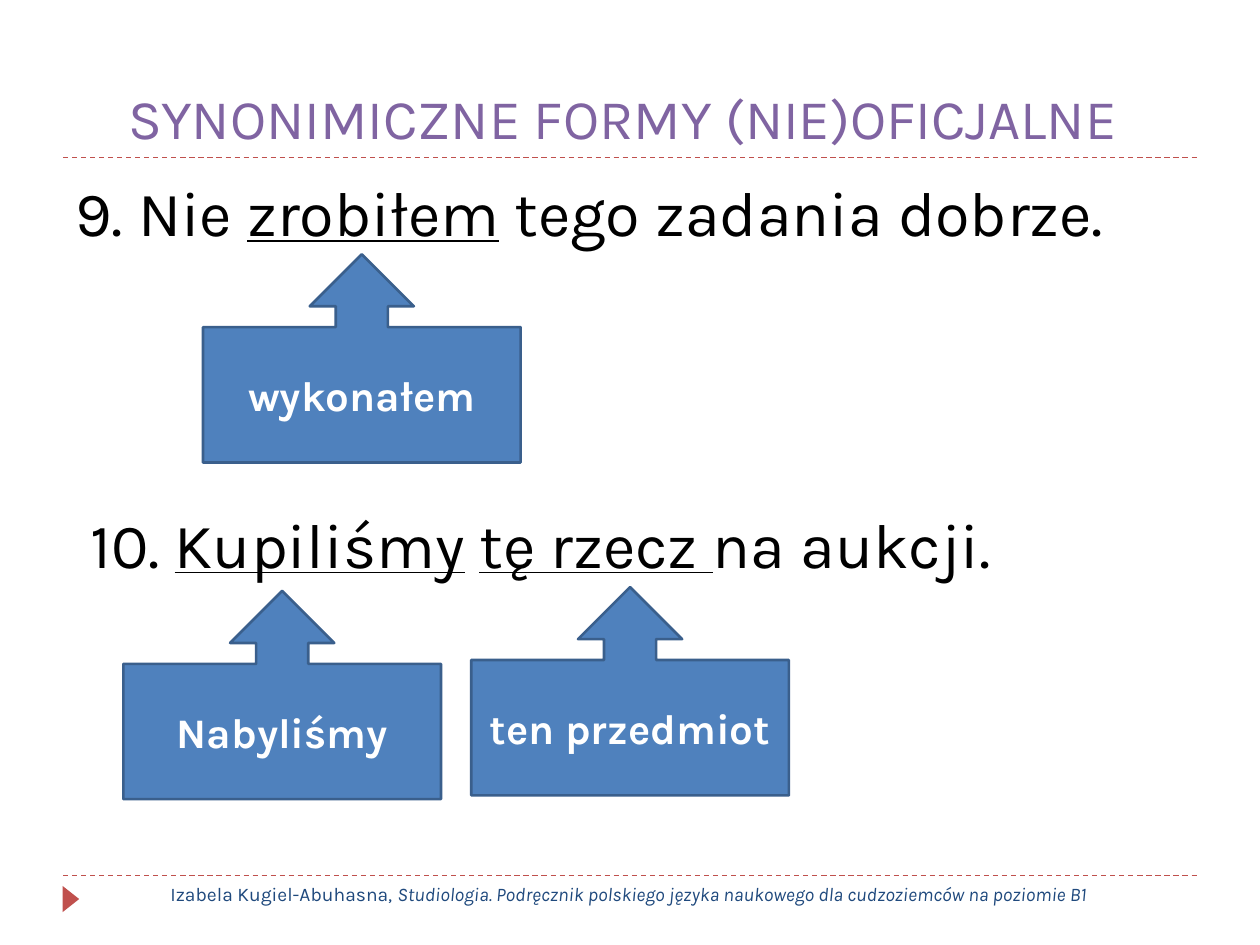
from lxml import etree
from pptx import Presentation
from pptx.dml.color import RGBColor
from pptx.enum.dml import MSO_LINE
from pptx.enum.shapes import MSO_CONNECTOR, MSO_SHAPE
from pptx.enum.text import MSO_ANCHOR, MSO_AUTO_SIZE, PP_ALIGN
from pptx.oxml.ns import qn
from pptx.util import Pt

DASH = MSO_LINE.DASH
STRAIGHT = MSO_CONNECTOR.STRAIGHT
TRIANGLE = MSO_SHAPE.ISOSCELES_TRIANGLE
CALLOUT = MSO_SHAPE.UP_ARROW_CALLOUT
TOP, MIDDLE, BOTTOM = MSO_ANCHOR.TOP, MSO_ANCHOR.MIDDLE, MSO_ANCHOR.BOTTOM
NO_AUTOFIT = MSO_AUTO_SIZE.NONE
LEFT, CENTER = PP_ALIGN.LEFT, PP_ALIGN.CENTER

FONT = "Karla"
COLORS = {
    "title": "8064A2",
    "accent": "C0504D",
    "credit": "1F497D",
    "sentence": "000000",
    "callout": "4F81BD",
    "callout_edge": "3A5F8C",
    "callout_text": "FFFFFF",
}
MARGIN, CONTENT_WIDTH = 36, 648
TITLE_RULE_Y, FOOTER_RULE_Y = 90, 500.4
CALLOUT_WIDTH, CALLOUT_HEIGHT = 181.5, 119


def color(name):
    return RGBColor.from_string(COLORS[name])


def set_frame(shape, anchor):
    frame = shape.text_frame
    settings = {"word_wrap": True, "auto_size": NO_AUTOFIT, "vertical_anchor": anchor}
    for attribute, value in settings.items():
        setattr(frame, attribute, value)
    return frame


def write_paragraph(paragraph, parts, size, color_name, align=CENTER, before=0):
    """Fill a paragraph from (text, extra font values) parts."""
    paragraph.alignment = align
    paragraph.space_before = Pt(before)
    for text, extra in parts:
        run = paragraph.add_run()
        run.text = text
        run.font.color.rgb = color(color_name)
        for attribute, value in {"name": FONT, "size": Pt(size), **extra}.items():
            setattr(run.font, attribute, value)


def add_title(slide, text):
    title = slide.shapes.title
    position = {"left": MARGIN, "top": 12.2, "width": CONTENT_WIDTH, "height": 77.8}
    for attribute, value in position.items():
        setattr(title, attribute, Pt(value))
    frame = set_frame(title, BOTTOM)
    write_paragraph(frame.paragraphs[0], [(text, {})], 32, "title")


def add_rule(slide, y):
    rule = slide.shapes.add_connector(
        STRAIGHT, Pt(MARGIN), Pt(y), Pt(MARGIN + CONTENT_WIDTH), Pt(y))
    rule.line.color.rgb = color("accent")
    rule.line.width = Pt(0.75)
    rule.line.dash_style = DASH
    etree.SubElement(rule._element.spPr, qn("a:effectLst"))


def add_marker(slide):
    marker = slide.shapes.add_shape(TRIANGLE, Pt(33), Pt(509), Pt(15), Pt(9.5))
    marker.rotation = 90
    marker.shadow.inherit = False
    marker.fill.solid()
    marker.fill.fore_color.rgb = color("accent")
    marker.line.fill.background()


def add_credit(slide):
    box = slide.shapes.add_textbox(Pt(70.5), Pt(FOOTER_RULE_Y), Pt(578), Pt(29))
    parts = [
        ("Izabela Kugiel-Abuhasna, ", {}),
        ("Studiologia. Podręcznik polskiego języka naukowego dla cudzoziemców"
         " na poziomie B1", {"italic": True}),
    ]
    write_paragraph(set_frame(box, TOP).paragraphs[0], parts, 11, "credit")


def add_sentences(slide):
    box = slide.shapes.add_textbox(Pt(MARGIN), Pt(95.8), Pt(CONTENT_WIDTH), Pt(389))
    frame = set_frame(box, TOP)
    underlined = {"underline": True}
    first = [("9. Nie ", {}), ("zrobiłem", underlined), (" tego zadania dobrze.", {})]
    second = [(" 10. ", {}), ("Kupiliśmy", underlined), (" ", {}),
              ("tę rzecz ", underlined), ("na aukcji.", {})]
    write_paragraph(frame.paragraphs[0], first, 36, "sentence", LEFT, 6)
    write_paragraph(frame.add_paragraph(), second, 36, "sentence", LEFT, 146.5)


def add_synonym(slide, text, left, top):
    callout = slide.shapes.add_shape(
        CALLOUT, Pt(left), Pt(top), Pt(CALLOUT_WIDTH), Pt(CALLOUT_HEIGHT))
    callout.shadow.inherit = False
    callout.fill.solid()
    callout.fill.fore_color.rgb = color("callout")
    callout.line.color.rgb = color("callout_edge")
    callout.line.width = Pt(1.5)
    frame = set_frame(callout, MIDDLE)
    write_paragraph(frame.paragraphs[0], [(text, {"bold": True})], 24, "callout_text")


def main():
    presentation = Presentation()
    presentation.slide_width, presentation.slide_height = Pt(720), Pt(540)
    slide = presentation.slides.add_slide(presentation.slide_layouts[5])

    for y in (FOOTER_RULE_Y, TITLE_RULE_Y):
        add_rule(slide, y)
    add_marker(slide)
    add_title(slide, "SYNONIMICZNE FORMY (NIE)OFICJALNE ")
    add_credit(slide)
    add_sentences(slide)
    for synonym, left, top in (
        ("wykonałem", 116, 145.3),
        ("Nabyliśmy", 70.5, 337.7),
        ("ten przedmiot", 269.3, 335.5),
    ):
        add_synonym(slide, synonym, left, top)

    presentation.save("out.pptx")


if __name__ == "__main__":
    main()
